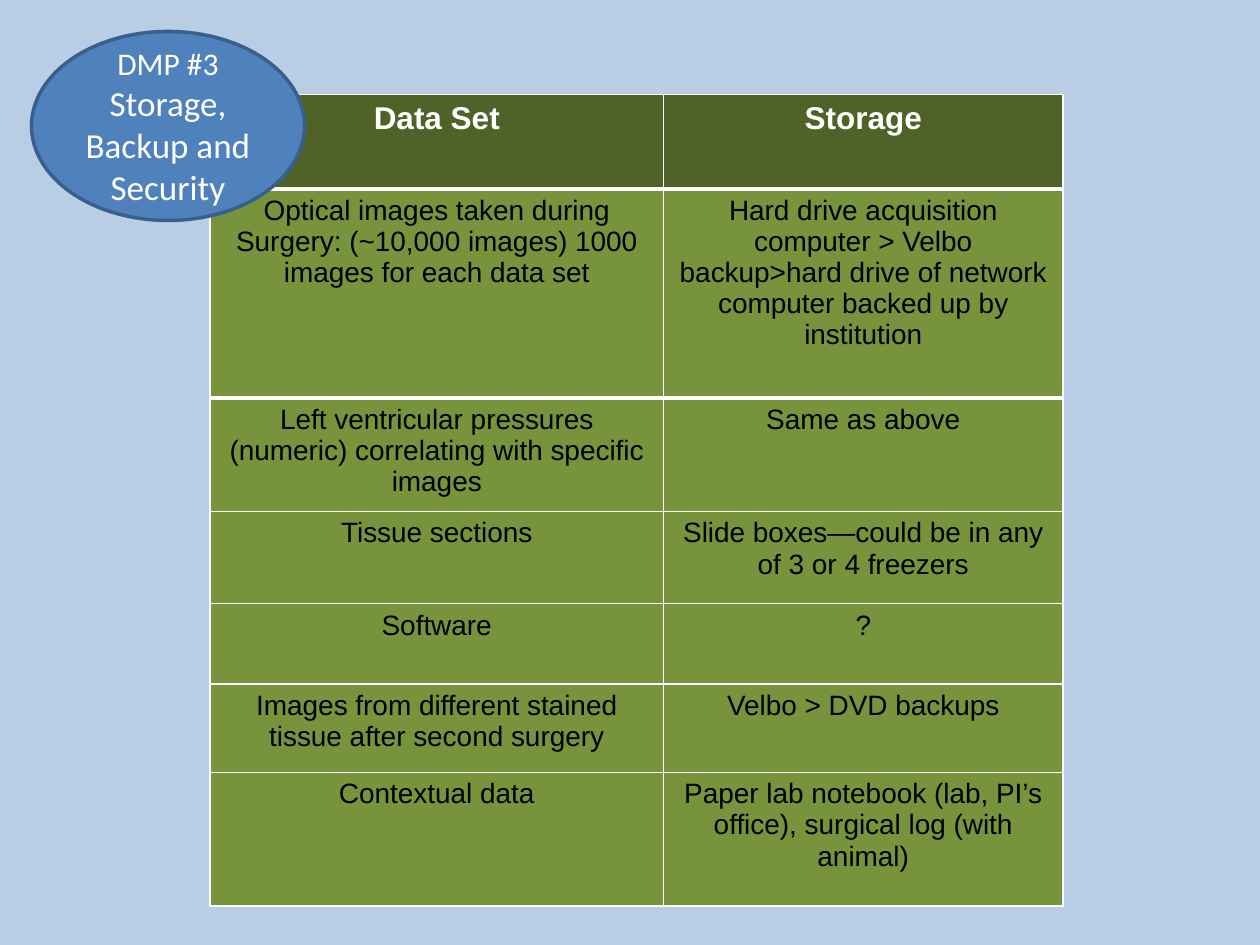
from dataclasses import dataclass

from lxml.etree import SubElement
from pptx import Presentation
from pptx.dml.color import RGBColor
from pptx.enum.shapes import MSO_SHAPE
from pptx.enum.text import MSO_ANCHOR, PP_ALIGN
from pptx.oxml.ns import qn
from pptx.slide import Slide
from pptx.util import Pt

COLUMN_WIDTHS = [259.2, 228.2]
ROW_HEIGHTS = [54, 119.5, 64.8, 52.6, 46.1, 50.4, 76.3]
ROWS = [
    ("Data Set", "Storage"),
    ("Optical images taken during\nSurgery: (~10,000 images) 1000 images for each data set",
     "Hard drive acquisition computer > Velbo backup>hard drive of network computer "
     "backed up by institution"),
    ("Left ventricular pressures (numeric) correlating with specific images", "Same as above"),
    ("Tissue sections", "Slide boxes—could be in any of 3 or 4 freezers"),
    ("Software", "?"),
    ("Images from different stained tissue after second surgery", "Velbo > DVD backups"),
    ("Contextual data", "Paper lab notebook (lab, PI’s office), surgical log (with animal)"),
]
HEADER_FORMAT = {"name": "Arial", "size": Pt(18), "bold": True}
BODY_FORMAT = {"name": "Arial", "size": Pt(16), "bold": False}
BADGE_FORMATS = [{"name": "Calibri", "size": Pt(size)} for size in (18, 20)]


def color(value):
    return RGBColor.from_string(value)


def paint(target, value):
    target.fill.solid()
    target.fill.fore_color.rgb = color(value)


@dataclass
class StorageSlide:
    slide: Slide
    background: str = "B9CDE5"
    header: str = "4F6228"
    body: str = "77933C"
    badge_fill: str = "4F81BD"
    badge_line: str = "3A5F8C"
    light: str = "FFFFFF"
    dark: str = "000000"

    def add_background(self):
        paint(self.slide.background, self.background)

    def set_text(self, text_frame, text, formats, font_color):
        text_frame.text = text
        for paragraph, values in zip(text_frame.paragraphs, formats):
            paragraph.alignment = PP_ALIGN.CENTER
            font = paragraph.runs[0].font
            for name, value in values.items():
                setattr(font, name, value)
            font.color.rgb = color(font_color)

    def add_borders(self, cell, top, bottom):
        properties = cell._tc.get_or_add_tcPr()
        for side, width in {"L": 1, "R": 1, "T": top, "B": bottom}.items():
            line = SubElement(properties, qn(f"a:ln{side}"), w=str(Pt(width)))
            fill = SubElement(line, qn("a:solidFill"))
            SubElement(fill, qn("a:srgbClr"), val=self.light)

    def add_table(self, left, top, column_widths, row_heights, rows):
        frame = self.slide.shapes.add_table(
            len(rows), len(column_widths), Pt(left), Pt(top),
            Pt(sum(column_widths)), Pt(sum(row_heights)))
        table = frame.table
        for column, width in zip(table.columns, column_widths):
            column.width = Pt(width)
        edges = [1, 3, 3] + [1] * (len(rows) - 2)
        for index, (row, height, texts) in enumerate(zip(table.rows, row_heights, rows)):
            row.height = Pt(height)
            if index == 0:
                fill, values, font_color = self.header, HEADER_FORMAT, self.light
            else:
                fill, values, font_color = self.body, BODY_FORMAT, self.dark
            for cell, text in zip(row.cells, texts):
                self.add_borders(cell, edges[index], edges[index + 1])
                paint(cell, fill)
                self.set_text(cell.text_frame, text, [values] * 2, font_color)

    def add_badge(self, left, top, width, height, text):
        shape = self.slide.shapes.add_shape(
            MSO_SHAPE.OVAL, Pt(left), Pt(top), Pt(width), Pt(height))
        shape.shadow.inherit = False
        paint(shape, self.badge_fill)
        shape.line.color.rgb = color(self.badge_line)
        shape.line.width = Pt(2)
        text_frame = shape.text_frame
        text_frame.word_wrap = True
        text_frame.vertical_anchor = MSO_ANCHOR.MIDDLE
        self.set_text(text_frame, text, BADGE_FORMATS, self.light)


def main():
    presentation = Presentation()
    presentation.slide_width = Pt(720)
    presentation.slide_height = Pt(540)
    page = StorageSlide(presentation.slides.add_slide(presentation.slide_layouts[6]))
    page.add_background()
    page.add_table(120, 54, COLUMN_WIDTHS, ROW_HEIGHTS, ROWS)
    page.add_badge(18, 18, 156, 108, "DMP #3\nStorage, Backup and Security")
    presentation.save("out.pptx")


if __name__ == "__main__":
    main()
